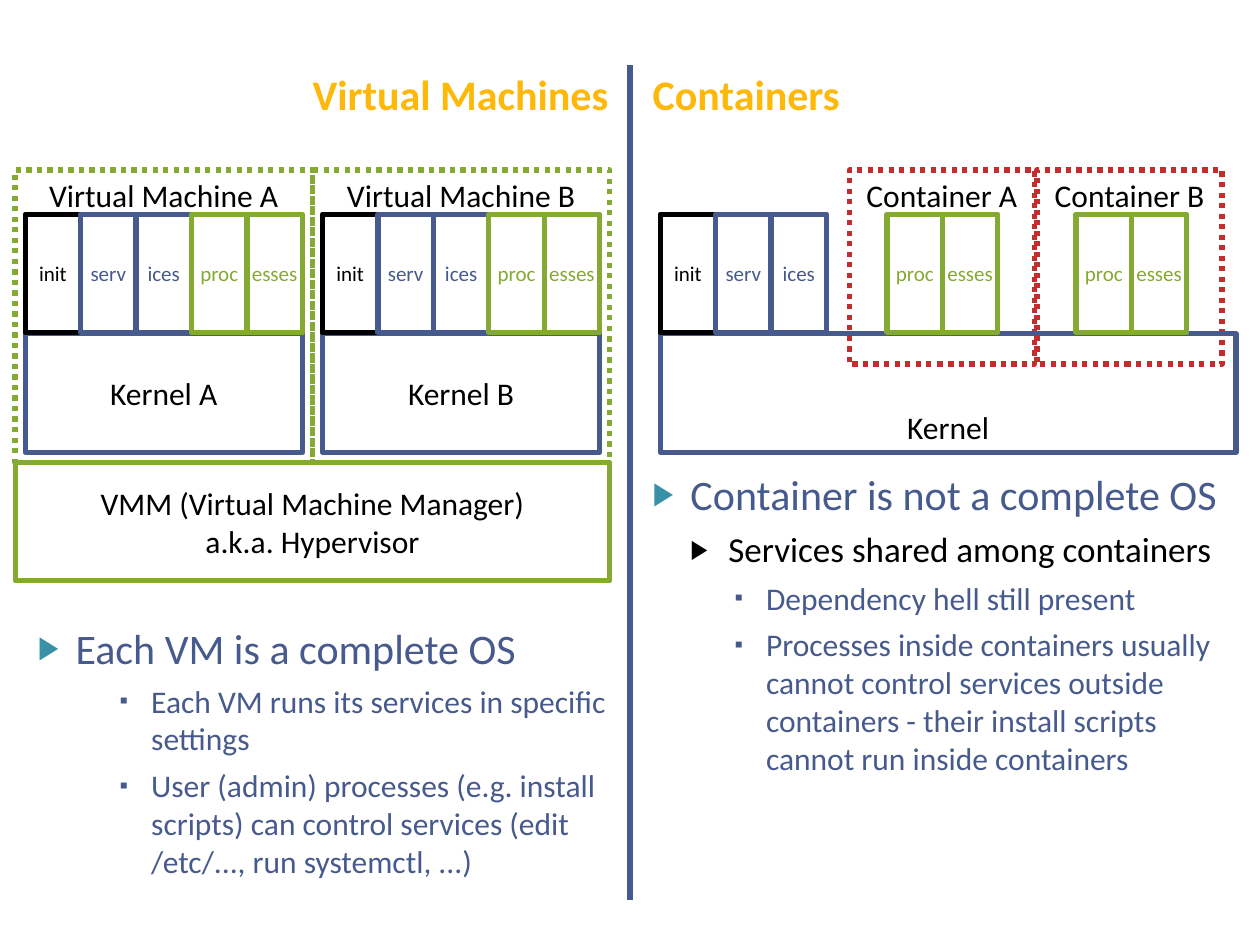
from dataclasses import dataclass

import pptx
import pptx.dml.color
import pptx.enum.dml
import pptx.enum.shapes
import pptx.enum.text
import pptx.oxml
import pptx.util
from lxml import etree
from pptx.util import Inches

COLORS = {"blue": "475A8D", "green": "84AA33", "red": "C32D2E",
          "orange": "FEB80A", "teal": "3891A7", "black": "000000"}
FONT = "Calibri"
ANCHOR = pptx.enum.text.MSO_ANCHOR
ALIGN = pptx.enum.text.PP_ALIGN
COMPARISON_LAYOUT = 4


@dataclass
class Box:
    lines: list[str]
    left: float
    top: float
    width: float
    height: float
    line_color: str
    text_color: str = "black"
    size: int = 18
    anchor: ANCHOR = ANCHOR.MIDDLE
    dotted: bool = False
    side_inset: float = 0.1


@dataclass
class ListLevel:
    margin: float
    hanging: float
    bullet: str
    bullet_color: str
    text_color: str
    size: int
    space_before: int


LEVELS = [
    ListLevel(0.3, 0.3, "▶", "teal", "blue", 24, 6),
    ListLevel(0.6, 0.3, "▶", "black", "black", 20, 5),
    ListLevel(0.9, 0.25, "▪", "blue", "blue", 18, 5),
]

PROCESSES = [("init", "black"), ("serv", "blue"), ("ices", "blue"),
             ("proc", "green"), ("esses", "green")]
PROCESS_PITCH = 0.44
PROCESS_TOP, KERNEL_TOP, VMM_TOP = 1.7, 2.65, 3.67
ROW_HEIGHT = 0.94
GROUP_TOP = 1.35


def rgb(name: str) -> pptx.dml.color.RGBColor:
    return pptx.dml.color.RGBColor.from_string(COLORS[name])


def add_run(paragraph, text: str, size: int, color: str, bold: bool = False) -> None:
    run = paragraph.add_run()
    run.text = text
    run.font.name = FONT
    run.font.size = pptx.util.Pt(size)
    run.font.bold = bold
    run.font.color.rgb = rgb(color)


def draw_box(slide, box: Box) -> None:
    shape = slide.shapes.add_shape(
        pptx.enum.shapes.MSO_SHAPE.RECTANGLE, Inches(box.left), Inches(box.top),
        Inches(box.width), Inches(box.height))
    shape.shadow.inherit = False
    shape.fill.background()
    shape.line.color.rgb = rgb(box.line_color)
    shape.line.width = pptx.util.Pt(3)
    if box.dotted:
        shape.line.dash_style = pptx.enum.dml.MSO_LINE.ROUND_DOT
    frame = shape.text_frame
    frame.word_wrap = True
    frame.vertical_anchor = box.anchor
    frame.margin_left = frame.margin_right = Inches(box.side_inset)
    for index, text in enumerate(box.lines):
        paragraph = frame.add_paragraph() if index else frame.paragraphs[0]
        paragraph.alignment = ALIGN.CENTER
        add_run(paragraph, text, box.size, box.text_color)


def draw_processes(slide, left: float, processes: list[tuple[str, str]]) -> None:
    for index, (name, color) in enumerate(processes):
        draw_box(slide, Box([name], left + index * PROCESS_PITCH, PROCESS_TOP,
                            PROCESS_PITCH, ROW_HEIGHT, color, color, 12, side_inset=0))


def draw_divider(slide) -> None:
    divider = slide.shapes.add_connector(
        pptx.enum.shapes.MSO_CONNECTOR.STRAIGHT,
        Inches(5), Inches(0.52), Inches(5), Inches(7.14))
    divider.line.color.rgb = rgb("blue")
    divider.line.width = pptx.util.Pt(4)
    etree.SubElement(divider._element.spPr, pptx.oxml.ns.qn("a:effectLst"))


def place(placeholder, left: float, top: float, width: float, height: float):
    placeholder.left, placeholder.top = Inches(left), Inches(top)
    placeholder.width, placeholder.height = Inches(width), Inches(height)
    frame = placeholder.text_frame
    frame.word_wrap = True
    frame.auto_size = pptx.enum.text.MSO_AUTO_SIZE.NONE
    return frame


def fill_heading(frame, text: str, alignment: ALIGN) -> None:
    frame.vertical_anchor = ANCHOR.BOTTOM
    paragraph = frame.paragraphs[0]
    paragraph.alignment = alignment
    paragraph.space_before = pptx.util.Pt(6)
    add_run(paragraph, text, 24, "orange", bold=True)


def set_bullet(paragraph, level: ListLevel) -> None:
    properties = paragraph._p.get_or_add_pPr()
    properties.set("marL", str(Inches(level.margin)))
    properties.set("indent", str(-Inches(level.hanging)))
    qn = pptx.oxml.ns.qn
    color = etree.SubElement(properties, qn("a:buClr"))
    etree.SubElement(color, qn("a:srgbClr"), val=COLORS[level.bullet_color])
    etree.SubElement(properties, qn("a:buSzPct"), val="76000")
    etree.SubElement(properties, qn("a:buFont"), typeface="Arial")
    etree.SubElement(properties, qn("a:buChar"), char=level.bullet)


def fill_list(frame, items: list[tuple[int, str]]) -> None:
    frame.vertical_anchor = ANCHOR.TOP
    for index, (depth, text) in enumerate(items):
        level = LEVELS[depth]
        paragraph = frame.add_paragraph() if index else frame.paragraphs[0]
        paragraph.level = depth
        paragraph.space_before = pptx.util.Pt(level.space_before)
        set_bullet(paragraph, level)
        add_run(paragraph, text, level.size, level.text_color)


def main() -> None:
    presentation = pptx.Presentation()
    presentation.slide_width, presentation.slide_height = Inches(10), Inches(7.5)
    slide = presentation.slides.add_slide(presentation.slide_layouts[COMPARISON_LAYOUT])
    title = slide.shapes.title._element
    title.getparent().remove(title)
    draw_divider(slide)

    # Headings and lists
    holders = slide.placeholders
    fill_heading(place(holders[1], 0.2, 0.6, 4.73, 0.39), "Virtual Machines", ALIGN.RIGHT)
    fill_heading(place(holders[3], 5.08, 0.6, 4.8, 0.39), "Containers", ALIGN.LEFT)
    fill_list(place(holders[2], 0.2, 4.89, 4.72, 2.24), [
        (0, "Each VM is a complete OS"),
        (2, "Each VM runs its services in specific settings"),
        (2, "User (admin) processes (e.g. install scripts) can control services "
            "(edit /etc/..., run systemctl, ...)"),
    ])
    fill_list(place(holders[4], 5.08, 3.67, 4.8, 3.46), [
        (0, "Container is not a complete OS"),
        (1, "Services shared among containers"),
        (2, "Dependency hell still present"),
        (2, "Processes inside containers usually cannot control services outside "
            "containers - their install scripts cannot run inside containers"),
    ])

    # Virtual machines on the hypervisor
    for name, left in (("A", 0.12), ("B", 2.48)):
        draw_box(slide, Box([f"Virtual Machine {name}"], left, GROUP_TOP, 2.36, 2.32,
                            "green", anchor=ANCHOR.TOP, dotted=True))
        draw_box(slide, Box([f"Kernel {name}"], left + 0.08, KERNEL_TOP, 2.2,
                            ROW_HEIGHT, "blue"))
        draw_processes(slide, left + 0.08, PROCESSES)
    draw_box(slide, Box(["VMM (Virtual Machine Manager)", "a.k.a. Hypervisor"],
                        0.12, VMM_TOP, 4.72, ROW_HEIGHT, "green"))

    # Containers on one shared kernel
    for name, left in (("A", 6.74), ("B", 8.23)):
        draw_box(slide, Box([f"Container {name}"], left, GROUP_TOP, 1.47, 1.54,
                            "red", anchor=ANCHOR.TOP, dotted=True))
    draw_box(slide, Box(["Kernel"], 5.24, KERNEL_TOP, 4.57, ROW_HEIGHT, "blue",
                        anchor=ANCHOR.BOTTOM))
    draw_processes(slide, 5.24, PROCESSES[:3])
    for left in (7.04, 8.54):
        draw_processes(slide, left, PROCESSES[3:])

    presentation.save("out.pptx")


if __name__ == "__main__":
    main()
